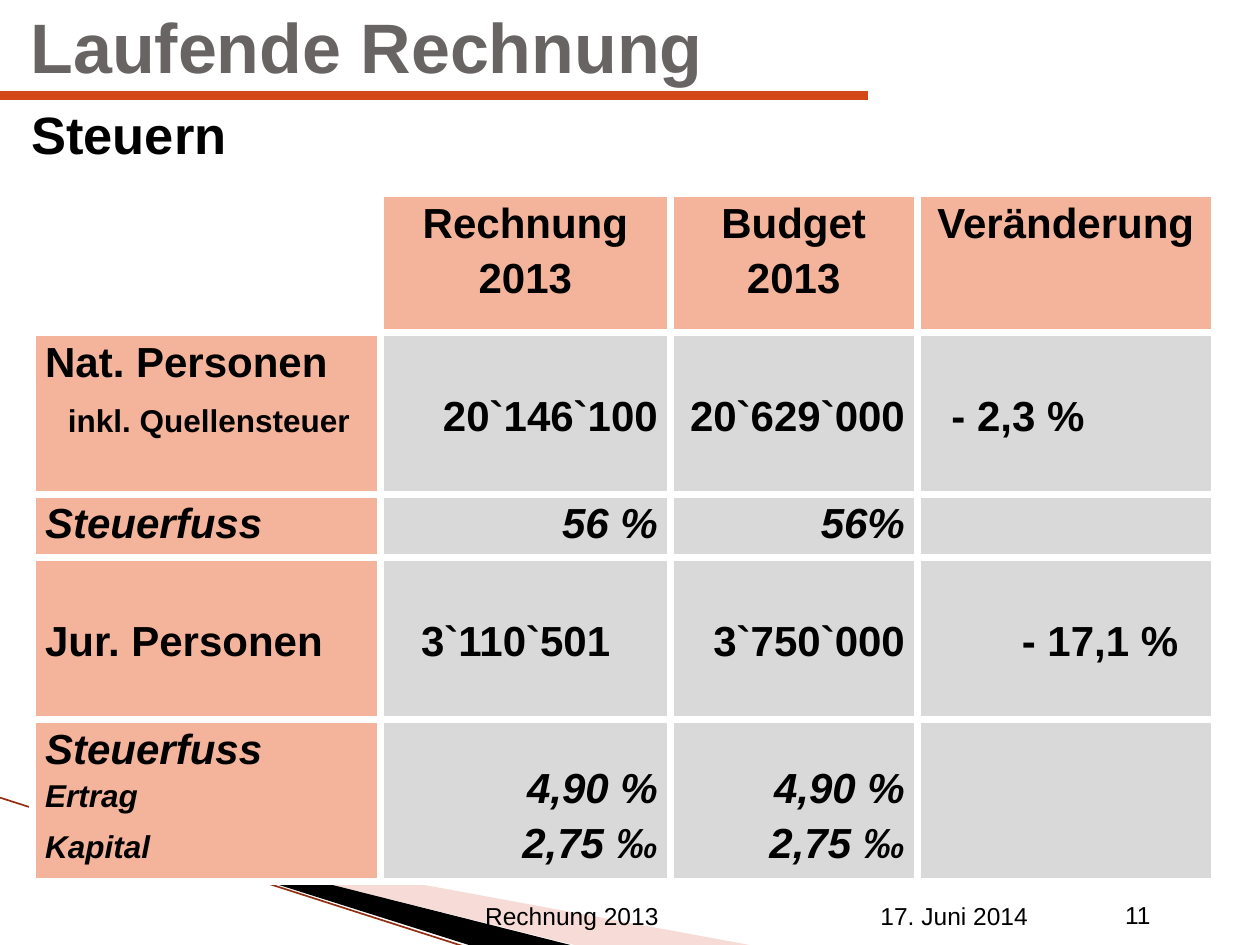
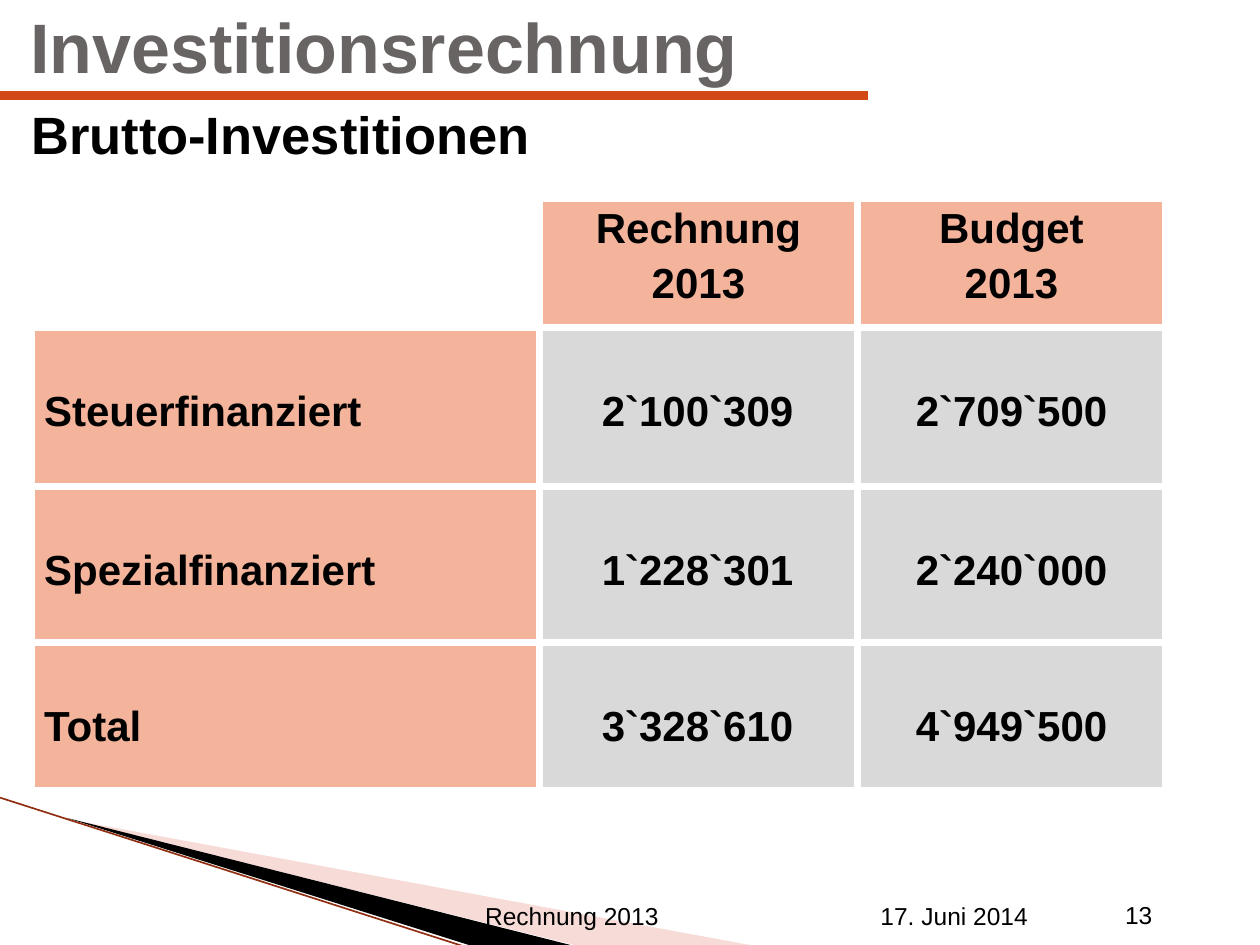
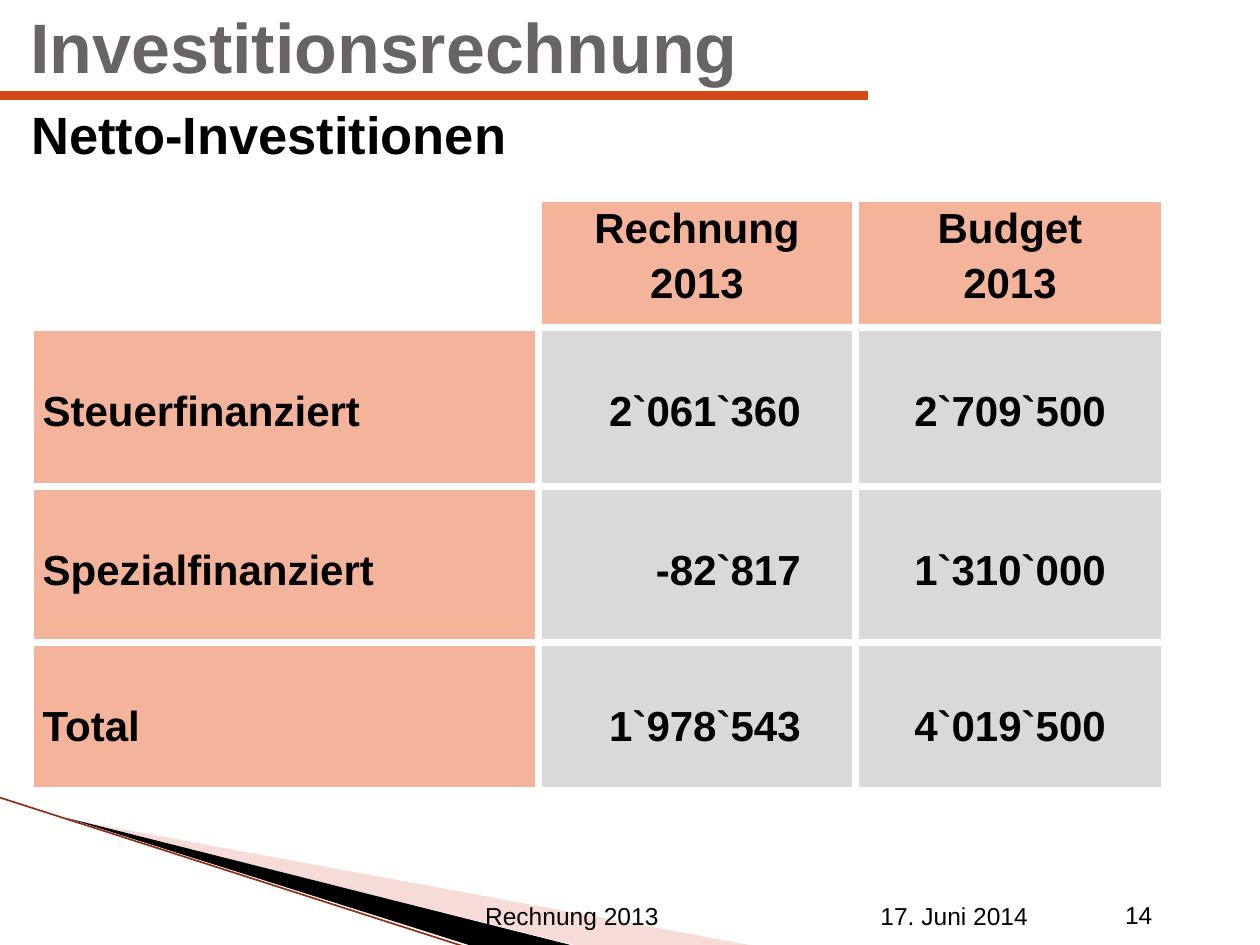
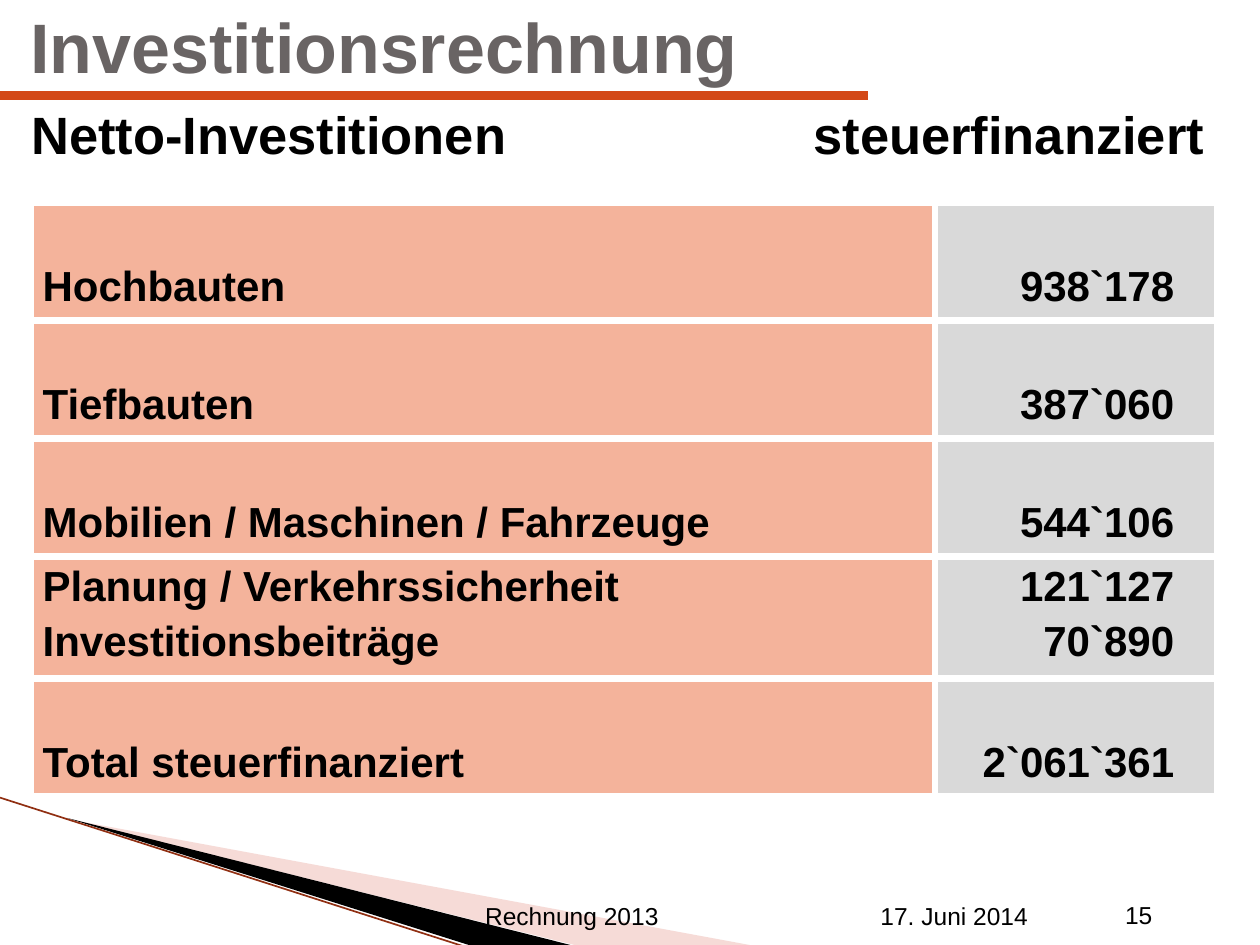
from dataclasses import dataclass

from lxml import etree
from pptx import Presentation
from pptx.dml.color import RGBColor
from pptx.enum.shapes import MSO_CONNECTOR
from pptx.enum.text import MSO_ANCHOR, MSO_AUTO_SIZE, PP_ALIGN
from pptx.oxml.ns import qn
from pptx.util import Cm, Pt

STRAIGHT = MSO_CONNECTOR.STRAIGHT
LEFT, CENTER, RIGHT = PP_ALIGN.LEFT, PP_ALIGN.CENTER, PP_ALIGN.RIGHT
TOP, MIDDLE = MSO_ANCHOR.TOP, MSO_ANCHOR.MIDDLE
NO_AUTOFIT = MSO_AUTO_SIZE.NONE

FONT = "Arial"
COLORS = {
    "text": "000000",
    "title": "696464",
    "rule": "D34817",
    "label": "F4B39B",
    "value": "D9D9D9",
    "border": "FFFFFF",
    "wedge_light": "E9A59D",
    "wedge_dark": "000000",
    "wedge_edge": "902F12",
}
TITLE_BOX = (0.36, -0.15, 15.49, 2.13)
SUBTITLE_BOX = (0.38, 1.93, 24.31, 1.6)
SUBTITLE_TAB = 23.65
FOOTER_TEXT, FOOTER_BOX = "Rechnung 2013", (9.53, 18.03, 7.98, 1.02)
DATE_TEXT, DATE_BOX = "17. Juni 2014", (17.5, 18.03, 4.93, 1.02)
NUMBER_BOX = (22.43, 18.01, 1.78, 1.02)

CELL_SIZE = 24
CELL_TOP = 0.13
SECOND_LINE = 1.23   # top margin that moves a text down by one line
HALF_LINE = 0.93
CELL_SIDE = 0.25


@dataclass
class Line:
    text: str
    size: float = CELL_SIZE
    before: float = 4.8
    indent: float = 0


@dataclass
class Cell:
    lines: tuple = ()
    fill: str = "value"
    align: PP_ALIGN = LEFT
    top: float = CELL_TOP
    right: float = CELL_SIDE
    italic: bool = False


def to_lines(texts):
    return tuple(text if isinstance(text, Line) else Line(text) for text in texts)


def header(*texts):
    return Cell(to_lines(texts), "label", CENTER)


def label(*texts, top=CELL_TOP, italic=False):
    return Cell(to_lines(texts), "label", LEFT, top, italic=italic)


def value(*texts, top=SECOND_LINE, right=CELL_SIDE, italic=False):
    return Cell(to_lines(texts), "value", RIGHT, top, right, italic)


def rgb(name):
    return RGBColor.from_string(COLORS[name])


def format_runs(paragraph, size, color="text", bold=False, italic=False):
    for run in paragraph.runs:
        run.font.name = FONT
        run.font.size = Pt(size)
        run.font.bold = bold
        run.font.italic = italic
        run.font.color.rgb = rgb(color)


def place(shape, box):
    shape.left, shape.top, shape.width, shape.height = (Cm(length) for length in box)


def add_text(slide, box, text, size, bold=False):
    text_box = slide.shapes.add_textbox(*(Cm(length) for length in box))
    text_box.text_frame.word_wrap = True
    text_box.text_frame.text = text
    paragraph = text_box.text_frame.paragraphs[0]
    format_runs(paragraph, size, bold=bold)
    return paragraph


def add_line(slide, start, end, color, width):
    line = slide.shapes.add_connector(STRAIGHT, *(Cm(length) for length in start + end))
    line.line.color.rgb = rgb(color)
    line.line.width = Pt(width)
    etree.SubElement(line._element.spPr, qn("a:effectLst"))
    return line


def add_wedge(slide, points, color, opacity=100):
    corners = [(Cm(x), Cm(y)) for x, y in points]
    builder = slide.shapes.build_freeform(*corners[0], scale=1.0)
    builder.add_line_segments(corners[1:], close=True)
    wedge = builder.convert_to_shape()
    wedge.shadow.inherit = False
    wedge.line.fill.background()
    wedge.fill.solid()
    wedge.fill.fore_color.rgb = rgb(color)
    if opacity < 100:
        color_element = wedge._element.spPr.find(".//" + qn("a:srgbClr"))
        etree.SubElement(color_element, qn("a:alpha"), val=str(opacity * 1000))
    return wedge


def decorate_layout(layout, slide):
    """Draw the corner wedges on a slide and move them to its layout."""
    for placeholder in list(layout.placeholders)[1:]:
        layout.shapes._spTree.remove(placeholder._element)
    decorations = (
        add_wedge(slide, [(1.4, 16.52), (15.11, 19.05), (11.58, 19.05)], "wedge_light", 40),
        add_wedge(slide, [(1.35, 16.49), (11.5, 19.05), (9.45, 19.05)], "wedge_dark"),
        add_line(slide, (0, 16.08), (9.42, 19.1), "wedge_edge", 0.95),
    )
    for shape in decorations:
        layout.shapes._spTree.append(shape._element)


def add_heading(slide, title, subtitle):
    placeholder = slide.shapes.title
    place(placeholder, TITLE_BOX)
    frame = placeholder.text_frame
    frame.text = title
    frame.auto_size = NO_AUTOFIT
    frame.vertical_anchor = MIDDLE
    frame.paragraphs[0].alignment = LEFT
    format_runs(frame.paragraphs[0], 40, "title", bold=True)

    paragraph = add_text(slide, SUBTITLE_BOX, subtitle, 30, bold=True)
    tab_list = etree.SubElement(paragraph._p.get_or_add_pPr(), qn("a:tabLst"))
    etree.SubElement(tab_list, qn("a:tab"), pos=str(Cm(SUBTITLE_TAB)), algn="r")
    add_line(slide, (0, 1.93), (17.5, 1.93), "rule", 5)


def add_footer(slide, number):
    add_text(slide, DATE_BOX, DATE_TEXT, 14)
    add_text(slide, NUMBER_BOX, str(number), 14)
    add_text(slide, FOOTER_BOX, FOOTER_TEXT, 14)


def set_borders(cell):
    properties = cell._tc.get_or_add_tcPr()
    for index, side in enumerate(("lnL", "lnR", "lnT", "lnB")):
        border = etree.Element(qn("a:" + side), w=str(Pt(4.5)))
        fill = etree.SubElement(border, qn("a:solidFill"))
        etree.SubElement(fill, qn("a:srgbClr"), val=COLORS["border"])
        properties.insert(index, border)


def fill_cell(cell, content):
    if content.fill:
        cell.fill.solid()
        cell.fill.fore_color.rgb = rgb(content.fill)
    else:
        cell.fill.background()
    set_borders(cell)
    cell.vertical_anchor = TOP
    cell.margin_left = Cm(CELL_SIDE)
    cell.margin_right = Cm(content.right)
    cell.margin_top = Cm(content.top)
    cell.margin_bottom = Cm(CELL_TOP)
    cell.text_frame.text = "\n".join(line.text for line in content.lines)
    for index, (paragraph, line) in enumerate(zip(cell.text_frame.paragraphs, content.lines)):
        paragraph.alignment = content.align
        if index:
            paragraph.space_before = Pt(line.before)
        if line.indent:
            paragraph._p.get_or_add_pPr().set("marL", str(Cm(line.indent)))
        format_runs(paragraph, line.size, bold=True, italic=content.italic)


def add_grid(slide, left, top, widths, heights, rows):
    frame = slide.shapes.add_table(len(heights), len(widths), Cm(left), Cm(top),
                                   Cm(sum(widths)), Cm(sum(heights)))
    table = frame.table
    table.first_row = False
    table.horz_banding = False
    for column, width in zip(table.columns, widths):
        column.width = Cm(width)
    for row, height, contents in zip(table.rows, heights, rows):
        row.height = Cm(height)
        for cell, content in zip(row.cells, contents):
            fill_cell(cell, content)


def add_tax_table(slide):
    rates = value("4,90 %", "2,75 ‰", top=HALF_LINE, italic=True)
    rows = [
        [Cell(fill="border"), header("Rechnung", "2013"), header("Budget", "2013"),
         header("Veränderung")],
        [label("Nat. Personen", Line("inkl. Quellensteuer", 18, 10, 0.46)),
         value("20`146`100"), value("20`629`000"), value("- 2,3 %", right=2.62)],
        [label("Steuerfuss", italic=True), value("56 %", top=CELL_TOP, italic=True),
         value("56%", top=CELL_TOP, italic=True), Cell()],
        [label("Jur. Personen", top=SECOND_LINE), value("3`110`501", right=1.21),
         value("3`750`000"), value("- 17,1 %", right=0.73)],
        [label("Steuerfuss", Line("Ertrag", 18, 3.6), Line("Kapital", 18, 8.8), italic=True),
         rates, rates, Cell()],
    ]
    add_grid(slide, 0.66, 3.91, (7.01, 5.84, 4.98, 5.99), (2.8, 3.26, 1.19, 3.26, 3.1), rows)


def add_investment_table(slide, left, right_margins, figures):
    """Compare account and budget; figures holds (name, account, budget) rows."""
    rows = [[Cell(fill=""), header("Rechnung", "2013"), header("Budget", "2013")]]
    for name, *amounts in figures:
        rows.append([label(name, top=SECOND_LINE)]
                    + [value(amount, right=margin)
                       for amount, margin in zip(amounts, right_margins)])
    add_grid(slide, left, 4.01, (10.24, 6.4, 6.22), (2.6, 3.2, 3.15, 2.97), rows)


def add_breakdown_table(slide, entries):
    """List (names, amounts) rows; a single line sits in the lower half of its row."""
    rows = []
    for names, amounts in entries:
        top = SECOND_LINE if len(names) == 1 else CELL_TOP
        rows.append([label(*names, top=top), value(*amounts, top=top, right=0.87)])
    add_grid(slide, 0.61, 4.09, (18.24, 5.69), (2.31,) * len(rows), rows)


def build_tax_slide(slide):
    add_heading(slide, "Laufende Rechnung", "Steuern")
    add_tax_table(slide)


def build_gross_slide(slide):
    add_heading(slide, "Investitionsrechnung", "Brutto-Investitionen")
    add_investment_table(slide, 0.64, (1.29, 1.18), [
        ("Steuerfinanziert", "2`100`309", "2`709`500"),
        ("Spezialfinanziert", "1`228`301", "2`240`000"),
        ("Total", "3`328`610", "4`949`500"),
    ])


def build_net_slide(slide):
    add_heading(slide, "Investitionsrechnung", "Netto-Investitionen")
    add_investment_table(slide, 0.61, (1.11, 1.18), [
        ("Steuerfinanziert", "2`061`360", "2`709`500"),
        ("Spezialfinanziert", "-82`817", "1`310`000"),
        ("Total", "1`978`543", "4`019`500"),
    ])


def build_breakdown_slide(slide):
    add_heading(slide, "Investitionsrechnung", "Netto-Investitionen\tsteuerfinanziert")
    add_breakdown_table(slide, [
        (["Hochbauten"], ["938`178"]),
        (["Tiefbauten"], ["387`060"]),
        (["Mobilien / Maschinen / Fahrzeuge"], ["544`106"]),
        (["Planung / Verkehrssicherheit", "Investitionsbeiträge"], ["121`127", "70`890"]),
        (["Total steuerfinanziert"], ["2`061`361"]),
    ])


def main():
    presentation = Presentation()
    presentation.slide_width = Cm(25.4)
    presentation.slide_height = Cm(19.05)
    layout = presentation.slide_layouts[5]
    pages = [(11, build_tax_slide), (13, build_gross_slide),
             (14, build_net_slide), (15, build_breakdown_slide)]
    for index, (number, build) in enumerate(pages):
        slide = presentation.slides.add_slide(layout)
        if index == 0:
            decorate_layout(layout, slide)
        add_footer(slide, number)
        build(slide)
    presentation.save("out.pptx")


if __name__ == "__main__":
    main()
